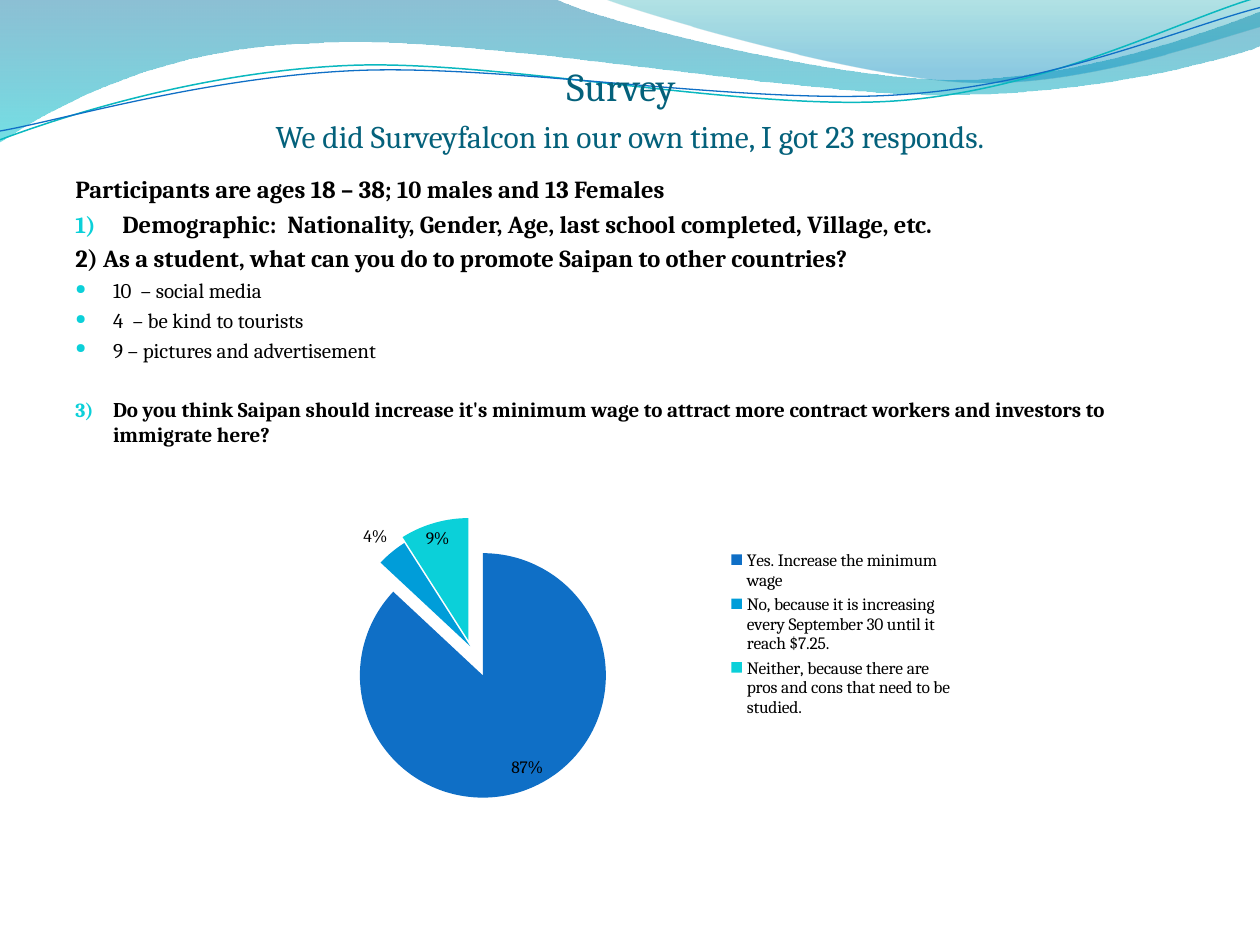
from dataclasses import dataclass
from typing import Optional

from lxml.etree import SubElement
from pptx import Presentation
from pptx.chart.data import CategoryChartData
from pptx.dml.color import RGBColor
from pptx.enum.chart import XL_CHART_TYPE, XL_LABEL_POSITION, XL_LEGEND_POSITION
from pptx.enum.text import MSO_ANCHOR, MSO_AUTO_SIZE, PP_ALIGN
from pptx.oxml import parse_xml
from pptx.oxml.ns import nsdecls, qn
from pptx.util import Cm, Pt

SERIF = "Cambria"
TEAL = "0BD0D9"
UNITS = 1000  # path units to the inch


@dataclass
class Stop:
    place: float
    tint: str
    alpha: int


@dataclass
class Wave:
    """Legs of two numbers are straight, legs of six are Bezier curves, in inches."""
    start: tuple
    legs: list
    stops: tuple = ()
    line: str = ""
    width: float = 0


@dataclass
class Item:
    text: str
    size: int = 14
    bold: bool = True
    indent: float = 0.76
    mark: Optional[str] = None
    first: int = 1
    gap: float = 0


@dataclass
class Slice:
    name: str
    share: float
    tint: str
    pull: int


WAVES = [
    Wave((0, 0), [
        (4.4, -0.01), (4.76, 0.17, 6.64, 0.63, 7.58, 0.63),
        (8.53, 0.63, 9.58, 0.26, 10, 0.09), (10.01, 0.36),
        (9.83, 0.44, 8.7, 0.76, 7.46, 0.75), (6.22, 0.75, 3.82, 0.28, 2.57, 0.34),
        (1.29, 0.36, 0.46, 0.83, -0.01, 1.13)],
        (Stop(0, "0074A1", 45), Stop(1, "00C6CF", 55))),
    Wave((4.79, -0.01), [
        (5.09, 0.11, 6.82, 0.62, 7.69, 0.65),
        (8.56, 0.69, 9.61, 0.32, 10, 0.21), (10, 0)],
        (Stop(0, "00A1A9", 30), Stop(0.8, "008BBF", 45))),
    Wave((0, 1.11), [
        (0.48, 0.93, 1.58, 0.57, 2.77, 0.52), (3.95, 0.47, 5.93, 0.89, 7.13, 0.8),
        (8.33, 0.71, 9.38, 0.15, 9.98, -0.02)], line="0AB8BF", width=0.85),
    Wave((0, 1.04), [
        (0.47, 0.96, 1.64, 0.61, 2.83, 0.56), (4.03, 0.51, 5.97, 0.84, 7.17, 0.75),
        (8.36, 0.67, 9.41, 0.21, 10, 0.06)], line="0F6FC6", width=0.75),
]

ITEMS = [
    Item("Participants are ages 18 – 38; 10 males and 13 Females", indent=0.95),
    Item("Demographic:  Nationality, Gender, Age, last school completed, Village, etc.",
         indent=0.95, mark="1)"),
    Item("2) As a student, what can you do to promote Saipan to other countries?"),
    Item("10  – social media", 12, False, mark="●"),
    Item("4  – be kind to tourists", 12, False, mark="●"),
    Item("9 – pictures and advertisement", 12, False, mark="●"),
    Item("Do you think Saipan should increase it's minimum wage to attract more "
         "contract workers and investors to immigrate here?",
         12, mark="1)", first=3, gap=16.8),
]

SLICES = [
    Slice("Yes. Increase the minimum wage", 0.87, "0F6FC6", 26),
    Slice("No, because it is increasing every September 30 until it reach $7.25.",
          0.04, "009DD9", 0),
    Slice("Neither, because there are pros and cons that need to be studied.",
          0.09, TEAL, 5),
]


def rgb(tint: str) -> RGBColor:
    return RGBColor.from_string(tint)


def bend(shape, legs: list) -> None:
    """Join each three line steps of a six-number leg into one Bezier curve."""
    steps = iter(list(shape.element.iter(qn("a:lnTo"))))
    for leg in legs:
        step = next(steps)
        if len(leg) == 6:
            step.tag = qn("a:cubicBezTo")
            for _ in range(2):
                extra = next(steps)
                step.append(extra[0])
                extra.getparent().remove(extra)


def draw_wave(slide, wave: Wave) -> None:
    x, y = (round(v * UNITS) for v in wave.start)
    pen = slide.shapes.build_freeform(x, y, scale=Cm(2.54) / UNITS)
    spots = [(round(leg[i] * UNITS), round(leg[i + 1] * UNITS))
             for leg in wave.legs for i in range(0, len(leg), 2)]
    pen.add_line_segments(spots, close=False)
    shape = pen.convert_to_shape()
    bend(shape, wave.legs)
    shape.shadow.inherit = False
    if not wave.stops:
        shape.fill.background()
        shape.line.color.rgb = rgb(wave.line)
        shape.line.width = Pt(wave.width)
        return
    SubElement(next(shape.element.iter(qn("a:path"))), qn("a:close"))
    shape.line.fill.background()
    shape.fill.gradient()
    shape.fill.gradient_angle = 270
    for stop, goal in zip(shape.fill.gradient_stops, wave.stops):
        stop.position = goal.place
        stop.color.rgb = rgb(goal.tint)
    for node, goal in zip(shape.element.iter(qn("a:srgbClr")), wave.stops):
        SubElement(node, qn("a:alpha")).set("val", str(goal.alpha * 1000))


def add_run(para, text: str, size: float, tint: str, font=SERIF, bold=False) -> None:
    run = para.add_run()
    run.text = text
    run.font.name, run.font.size, run.font.bold = font, Pt(size), bold
    run.font.color.rgb = rgb(tint)


def draw_title(slide) -> None:
    title, tint = slide.shapes.title, "04617B"
    title.left, title.top, title.width, title.height = Cm(1.27), Cm(0.64), Cm(22.86), Cm(2.49)
    title.element.getparent().append(title.element)  # in front of the waves
    frame = title.text_frame
    frame.auto_size = MSO_AUTO_SIZE.NONE
    frame.vertical_anchor = MSO_ANCHOR.BOTTOM
    frame.margin_left = frame.margin_right = frame.margin_bottom = 0
    para = frame.paragraphs[0]
    para.alignment = PP_ALIGN.CENTER
    add_run(para, "Survey", 22.5, tint)
    add_run(para, " ", 45, tint, "Calibri")
    para.add_line_break()
    add_run(para, "We did Surveyfalcon in our own time, I got 23 responds.", 18, tint)


def set_mark(para, item: Item) -> None:
    """Give the paragraph its hanging indent and its bullet or number."""
    props = para._p.get_or_add_pPr()
    props.set("marL", str(Cm(item.indent)))
    props.set("indent", str(-Cm(item.indent)))
    if not item.mark:
        SubElement(props, qn("a:buNone"))
        return
    number = item.mark == "1)"
    SubElement(SubElement(props, qn("a:buClr")), qn("a:srgbClr")).set("val", TEAL)
    SubElement(props, qn("a:buSzPct")).set("val", "95000" if number else "65000")
    if number:
        auto = SubElement(props, qn("a:buAutoNum"))
        auto.set("type", "arabicParenR")
        auto.set("startAt", str(item.first))
    else:
        SubElement(props, qn("a:buChar")).set("char", item.mark)


def draw_items(slide) -> None:
    frame = slide.shapes.add_textbox(Cm(1.27), Cm(3.38), Cm(22.86), Cm(13.97)).text_frame
    frame.word_wrap = True
    for i, item in enumerate(ITEMS):
        para = frame.add_paragraph() if i else frame.paragraphs[0]
        para.space_before = Pt(item.size * 0.22 + item.gap)
        set_mark(para, item)
        add_run(para, item.text, item.size, "000000", bold=item.bold)


def draw_chart(slide) -> None:
    data = CategoryChartData(number_format="0%")
    data.categories = [s.name for s in SLICES]
    data.add_series("Series 1", [s.share for s in SLICES])
    chart = slide.shapes.add_chart(
        XL_CHART_TYPE.PIE, Cm(5.08), Cm(9.53), Cm(14.4), Cm(6.55), data).chart
    chart.has_title = False
    chart.font.name, chart.font.size = SERIF, Pt(10)
    chart.font.color.rgb = rgb("000000")
    chart.has_legend = True
    chart.legend.position = XL_LEGEND_POSITION.RIGHT
    chart.legend.include_in_layout = False
    plot = chart.plots[0]
    plot.vary_by_categories = True
    plot.has_data_labels = True
    labels = plot.data_labels
    labels.show_value = True
    labels.show_percentage = False
    labels.number_format, labels.number_format_is_linked = "0%", False
    labels.position = XL_LABEL_POSITION.BEST_FIT
    for i, part in enumerate(SLICES):
        fill = plot.series[0].points[i].format.fill
        fill.solid()
        fill.fore_color.rgb = rgb(part.tint)
    for node, part in zip(chart.element.iter(qn("c:dPt")), SLICES):
        node.find(qn("c:spPr")).addprevious(
            parse_xml(f'<c:explosion {nsdecls("c")} val="{part.pull}"/>'))
    area = chart.element.find(".//" + qn("c:plotArea"))
    for old in area.findall(qn("c:layout")):
        area.remove(old)
    place = {"layoutTarget": "inner", "xMode": "edge", "yMode": "edge",
             "x": 0.133, "y": 0.159, "w": 0.345, "h": 0.757}
    inner = "".join(f'<c:{key} val="{val}"/>' for key, val in place.items())
    area.insert(0, parse_xml(
        f'<c:layout {nsdecls("c")}><c:manualLayout>{inner}</c:manualLayout></c:layout>'))


def main() -> None:
    deck = Presentation()
    deck.slide_width, deck.slide_height = Cm(25.4), Cm(19.05)
    slide = deck.slides.add_slide(deck.slide_layouts[5])
    for wave in WAVES:
        draw_wave(slide, wave)
    draw_title(slide)
    draw_items(slide)
    draw_chart(slide)
    deck.save("out.pptx")


if __name__ == "__main__":
    main()
